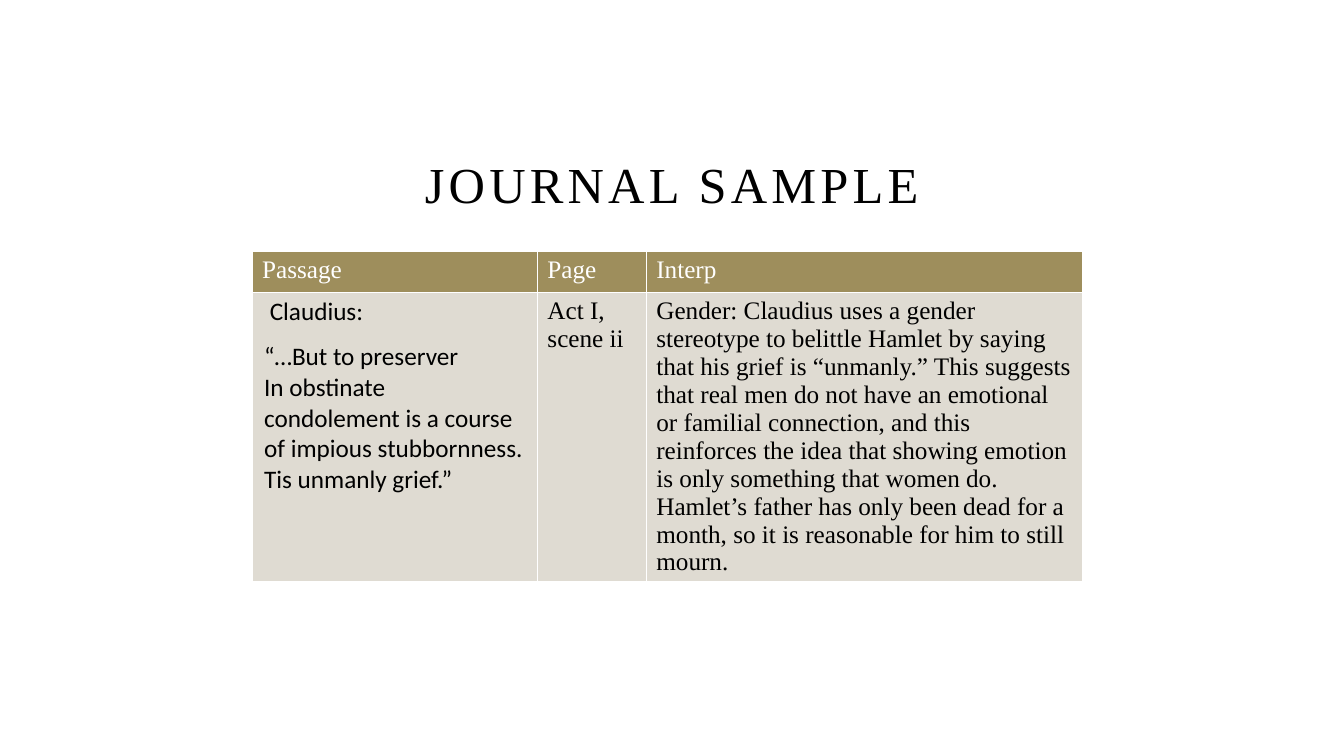
from pptx import Presentation
from pptx.dml.color import RGBColor
from pptx.enum.text import MSO_ANCHOR, MSO_AUTO_SIZE, PP_ALIGN
from pptx.oxml import parse_xml
from pptx.oxml.ns import nsdecls
from pptx.util import Inches, Pt

SERIF, SANS = "Times New Roman", "Calibri"
BLACK, WHITE, OLIVE, SAND = "000000", "FFFFFF", "9E8E5C", "DFDBD2"


def format_font(font, name, size, color):
    values = {"name": name, "size": Pt(size), "bold": False}
    for attribute, value in values.items():
        setattr(font, attribute, value)
    font.color.rgb = RGBColor.from_string(color)


def add_borders(cell, color, points):
    properties = cell._tc.get_or_add_tcPr()
    for side in ("lnL", "lnR", "lnT", "lnB"):
        properties.append(parse_xml(
            f'<a:{side} {nsdecls("a")} w="{Pt(points)}"><a:solidFill>'
            f'<a:srgbClr val="{color}"/></a:solidFill></a:{side}>'))


presentation = Presentation()
presentation.slide_width = Inches(13.33)
presentation.slide_height = Inches(7.5)
slide = presentation.slides.add_slide(presentation.slide_layouts[5])

title = slide.shapes.title
title_box = {"left": 2, "top": 1.42, "width": 9.33, "height": 0.75}
for attribute, value in title_box.items():
    setattr(title, attribute, Inches(value))
title.text_frame.auto_size = MSO_AUTO_SIZE.NONE
title.text_frame.vertical_anchor = MSO_ANCHOR.BOTTOM
title_paragraph = title.text_frame.paragraphs[0]
title_paragraph.alignment = PP_ALIGN.CENTER
title_run = title_paragraph.add_run()
title_run.text = "JOURNAL SAMPLE"
format_font(title_run.font, SERIF, 36, BLACK)
title_run.font._element.set("spc", "300")

journal_rows = [
    ["Passage", "Page", "Interp"],
    [
        " Claudius:\n“…But to preserver\nIn obstinate condolement is a course "
        "of impious stubbornness. Tis unmanly grief.”",
        "Act I, scene ii",
        "Gender: Claudius uses a gender stereotype to belittle Hamlet by saying "
        "that his grief is “unmanly.” This suggests that real men do not have an "
        "emotional or familial connection, and this reinforces the idea that "
        "showing emotion is only something that women do. Hamlet’s father has "
        "only been dead for a month, so it is reasonable for him to still mourn.",
    ],
]
column_widths = [2.83, 1.08, 4.33]
row_heights = [0.41, 2.8]
row_colors = [(OLIVE, WHITE), (SAND, BLACK)]

table = slide.shapes.add_table(
    2, 3, Inches(2.5), Inches(2.49), Inches(8.24), Inches(3.21)).table
table.first_row = False
table.horz_banding = False
for column, width in zip(table.columns, column_widths):
    column.width = Inches(width)

for row, height, texts, (fill, color) in zip(
        table.rows, row_heights, journal_rows, row_colors):
    row.height = Inches(height)
    for cell, text in zip(row.cells, texts):
        add_borders(cell, WHITE, 1)
        cell.fill.solid()
        cell.fill.fore_color.rgb = RGBColor.from_string(fill)
        cell.text = text
        font_name = SANS if "Claudius:\n" in text else SERIF
        for paragraph in cell.text_frame.paragraphs:
            for run in paragraph.runs:
                format_font(run.font, font_name, 18, color)

passage = table.cell(1, 0)
passage_margins = {"margin_left": 0.12, "margin_top": 0,
                   "margin_right": 0.12, "margin_bottom": 0}
for attribute, value in passage_margins.items():
    setattr(passage, attribute, Inches(value))
speaker = passage.text_frame.paragraphs[0]
speaker.line_spacing = 1.15
speaker.space_after = Pt(10)

presentation.save("out.pptx")
